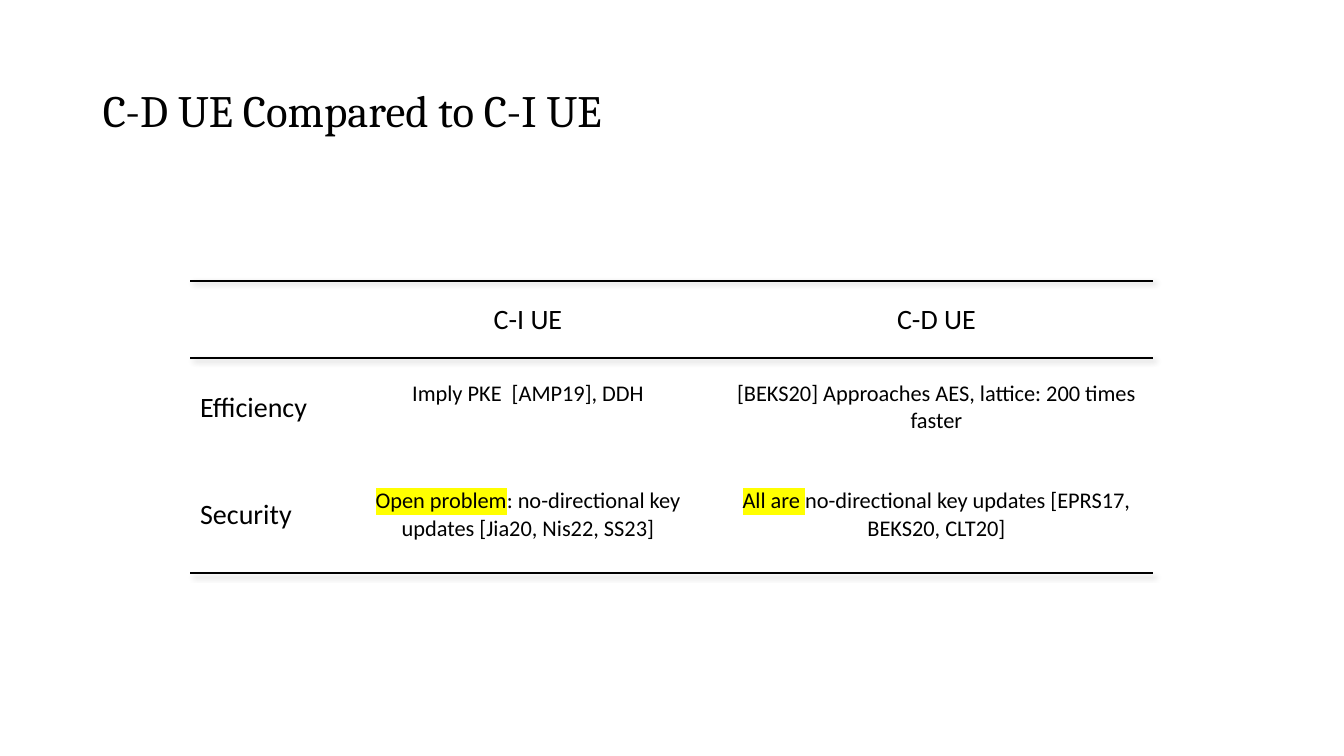
import pptx
import pptx.util
import pptx.dml.color
import pptx.enum.text
import pptx.oxml
import pptx.oxml.ns

HEADING = "C-D UE Compared to C-I UE"
COMPARISON = [
    [[], [("C-I UE", None)], [("C-D UE", None)]],
    [[("Efficiency", None)],
     [("Imply PKE  [AMP19], DDH", None)],
     [("[BEKS20] Approaches AES, lattice: 200 times faster", None)]],
    [[("Security", None)],
     [("Open problem", "FFFF00"),
      (": no-directional key updates [Jia20, Nis22, SS23]", None)],
     [("All are ", "FFFF00"),
      ("no-directional key updates [EPRS17, BEKS20, CLT20]", None)]],
]
COLUMN_WIDTHS = [146, 384, 433]
ROW_HEIGHTS = [77, 99, 116]
RULES = [("lnT", "lnB"), ("lnT",), ("lnB",)]
HEADING_BOX = (93, 40, 1159, 146)
TABLE_CORNER = (190, 281)
SLIDE_SIZE = (1344, 756)
INK = "000000"
NO_STYLE = "{2D5ABB26-0587-4C30-8999-92F81FD0307C}"
NS = pptx.oxml.ns.nsdecls("a")


def px(length):
    return pptx.util.Emu(round(length * 914400 / 100.8))


def colour(code):
    return pptx.dml.color.RGBColor.from_string(code)


def style(run, size, face, marker=None):
    run.font.size = pptx.util.Pt(size)
    run.font.color.rgb = colour(INK)
    run.font.name = face
    if marker:
        fill = run.font._element.find(pptx.oxml.ns.qn("a:solidFill"))
        fill.addnext(pptx.oxml.parse_xml(
            f'<a:highlight {NS}><a:srgbClr val="{marker}"/></a:highlight>'))


def rule_cell(cell, sides):
    properties = cell._tc.get_or_add_tcPr()
    for place, side in enumerate(["lnL", "lnR", "lnT", "lnB"]):
        paint = (f'<a:solidFill><a:srgbClr val="{INK}"/></a:solidFill>'
                 if side in sides else "<a:noFill/>")
        properties.insert(place, pptx.oxml.parse_xml(
            f'<a:{side} {NS} w="12700">{paint}</a:{side}>'))


def add_heading(slide):
    heading = slide.shapes.add_textbox(*map(px, HEADING_BOX)).text_frame
    heading.word_wrap = True
    heading.vertical_anchor = pptx.enum.text.MSO_ANCHOR.MIDDLE
    heading.text = HEADING
    heading.paragraphs[0].line_spacing = 0.9
    style(heading.paragraphs[0].runs[0], 32, "Cambria")


def add_comparison(slide):
    size = (sum(COLUMN_WIDTHS), sum(ROW_HEIGHTS))
    comparison = slide.shapes.add_table(
        len(ROW_HEIGHTS), len(COLUMN_WIDTHS), *map(px, TABLE_CORNER + size)).table
    comparison.first_row = comparison.horz_banding = False
    properties = comparison._tbl.tblPr
    properties.find(pptx.oxml.ns.qn("a:tableStyleId")).text = NO_STYLE
    properties.insert(0, pptx.oxml.parse_xml(
        f'<a:effectLst {NS}><a:outerShdw blurRad="50800" dist="38100" dir="2700000" '
        f'algn="tl"><a:srgbClr val="{INK}"><a:alpha val="40000"/></a:srgbClr>'
        '</a:outerShdw></a:effectLst>'))
    for column, width in zip(comparison.columns, COLUMN_WIDTHS):
        column.width = px(width)
    for row, height in zip(comparison.rows, ROW_HEIGHTS):
        row.height = px(height)
    for r, entries in enumerate(COMPARISON):
        for c, pieces in enumerate(entries):
            cell = comparison.cell(r, c)
            cell.fill.background()
            cell.vertical_anchor = pptx.enum.text.MSO_ANCHOR.MIDDLE
            rule_cell(cell, RULES[r])
            paragraph = cell.text_frame.paragraphs[0]
            if c:
                paragraph.alignment = pptx.enum.text.PP_ALIGN.CENTER
            for words, marker in pieces:
                run = paragraph.add_run()
                run.text = words
                style(run, 16 if r and c else 20, "Calibri", marker)
    comparison.cell(1, 1).margin_bottom = px(32)


def main():
    deck = pptx.Presentation()
    deck.slide_width, deck.slide_height = map(px, SLIDE_SIZE)
    slide = deck.slides.add_slide(deck.slide_layouts[6])
    add_heading(slide)
    add_comparison(slide)
    deck.save("out.pptx")


if __name__ == "__main__":
    main()
